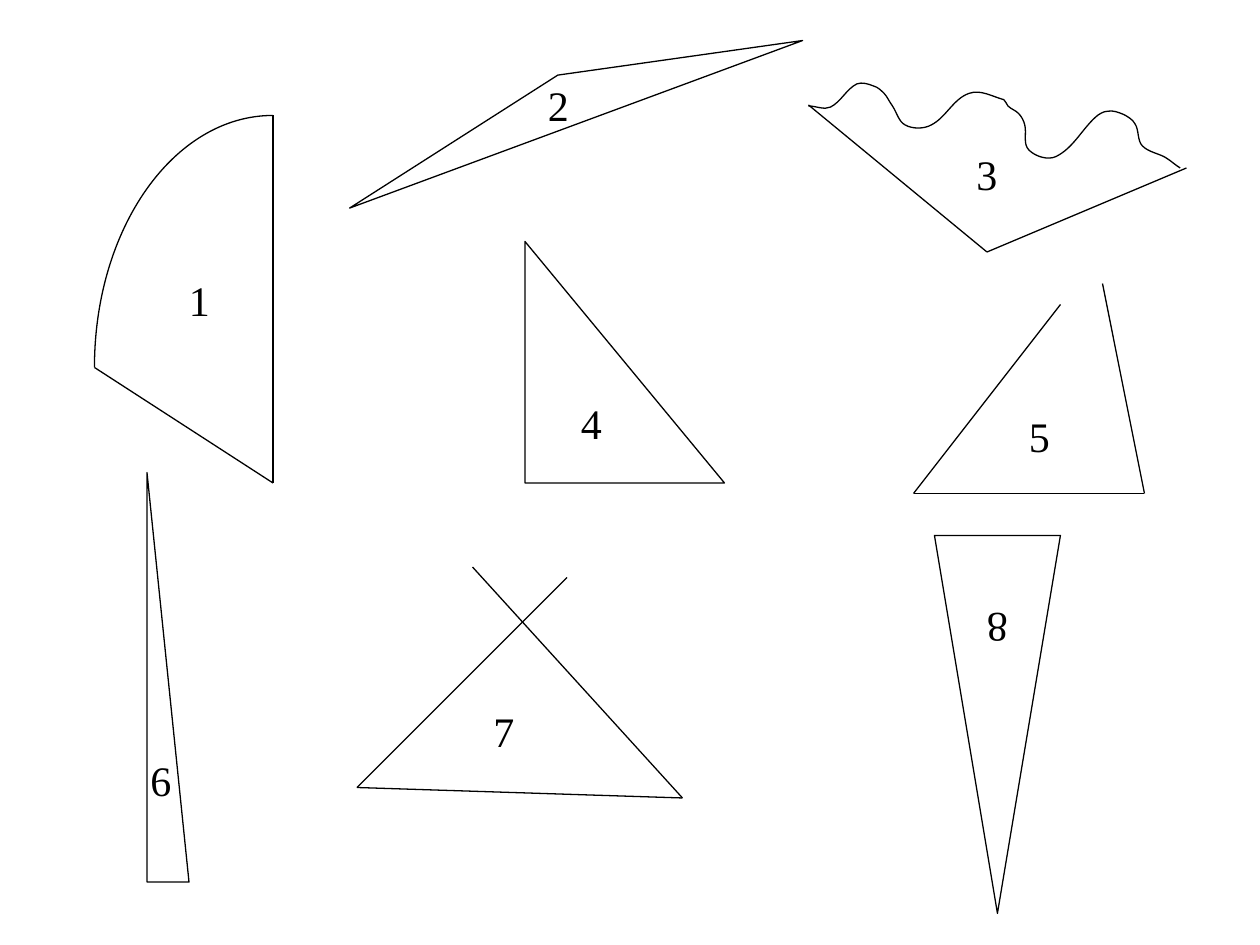
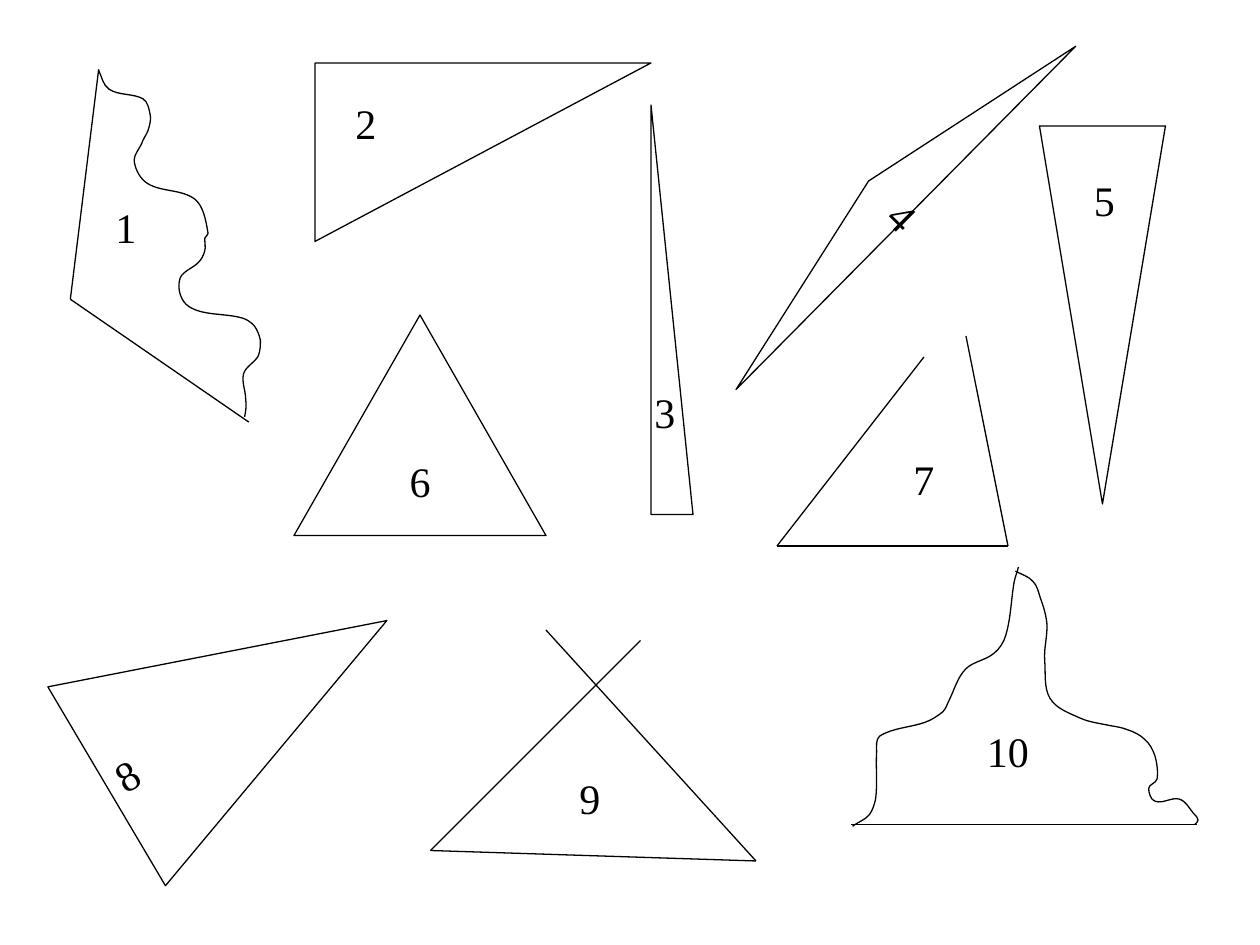
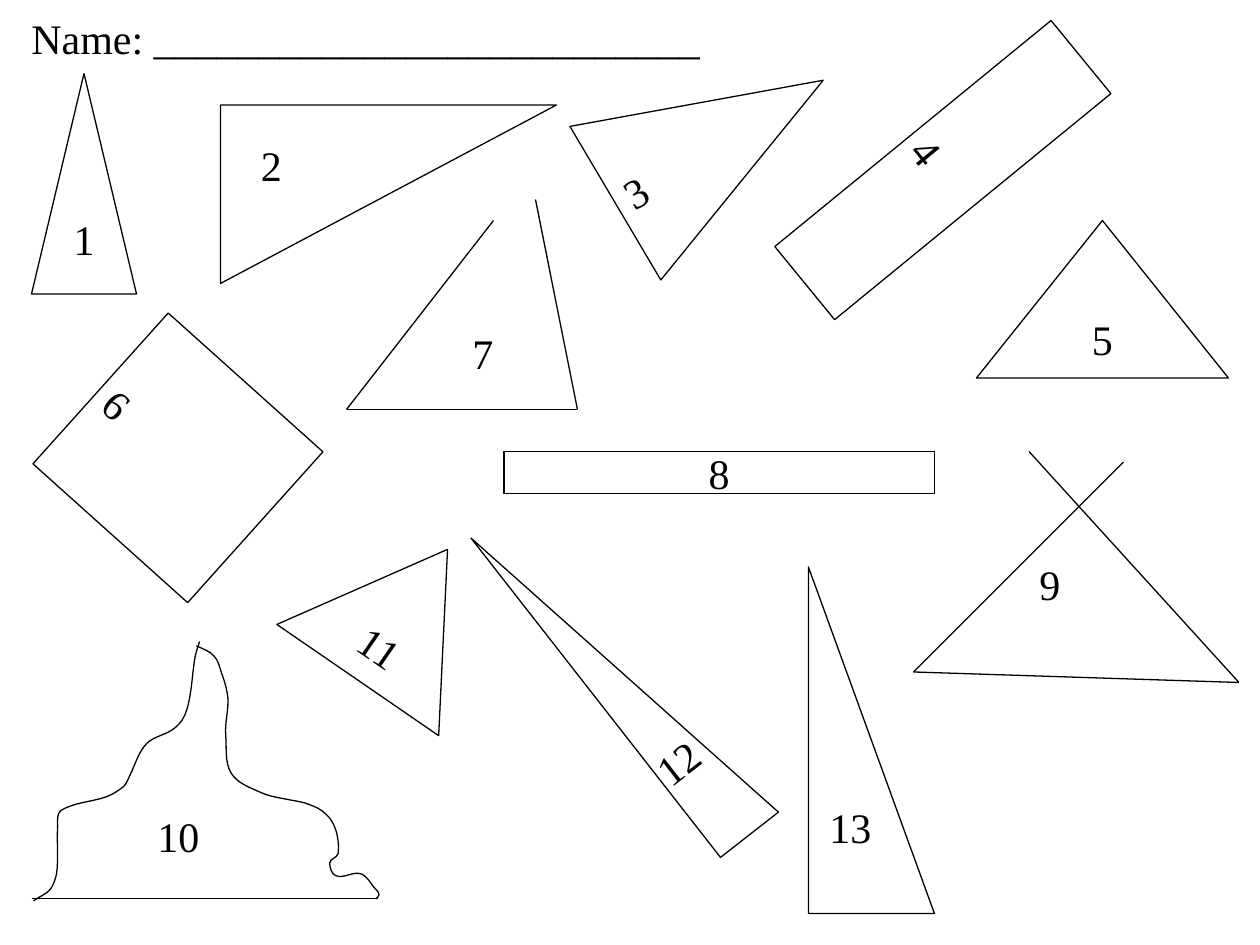
import math
from collections import namedtuple
from lxml import etree
from pptx import Presentation
from pptx import util as u
from pptx.dml.color import RGBColor
from pptx.enum import shapes, text
from pptx.oxml.ns import qn

PX = 7620
FONT = "Times New Roman"
COLORS = {"ink": "000000", "paper": "FFFFFF"}
INK = RGBColor.from_string(COLORS["ink"])
PAPER = RGBColor.from_string(COLORS["paper"])

TRIANGLE = shapes.MSO_SHAPE.ISOSCELES_TRIANGLE
RIGHT = shapes.MSO_SHAPE.RIGHT_TRIANGLE
RECTANGLE = shapes.MSO_SHAPE.RECTANGLE

UPRIGHT = {}
SIDEWAYS = {"vert": "eaVert"}
COUNTER_TURNED = {"vert": "eaVert", "rot": "10800000"}

LABEL_HEIGHT = 60
ONE_DIGIT, TWO_DIGITS, NAME_LINE = 44, 64, 661

Figure = namedtuple("Figure", "kind left top width height words angle flow flipped",
                    defaults=("", 0, UPRIGHT, False))
Sketch = namedtuple("Sketch", "sides curves", defaults=([],))
Place = namedtuple("Place", "sketch x y angle", defaults=(0,))
Label = namedtuple("Label", "words left top width", defaults=(ONE_DIGIT,))
Page = namedtuple("Page", "filled figures places labels")


def smooth(anchors):
    knots = [complex(*anchor) for anchor in anchors]
    padded = [knots[0], *knots, knots[-1]]
    headings = [(after - before) / abs(after - before)
                for before, after in zip(padded, padded[2:])]
    points = knots[:1]
    for index in range(len(knots) - 1):
        start, end = knots[index:index + 2]
        reach = abs(end - start) / 3
        points += [start + headings[index] * reach, end - headings[index + 1] * reach, end]
    return [(point.real, point.imag) for point in points]


def write(box, words):
    box.text_frame.word_wrap = False
    para = box.text_frame.paragraphs[0]
    span = para.add_run()
    span.text = words
    span.font.name = FONT
    span.font.size = u.Pt(24)
    span.font.color.rgb = INK
    return para


CROSSED = Sketch([((200, -200), (0, 0)), ((110, -210), (310, 10)), ((0, 0), (310, 10))])
OPEN = Sketch([((140, -180), (0, 0)), ((0, 0), (220, 0)), ((180, -200), (220, 0))])
SECTOR = Sketch(
    [((170, -240), (170, 110)), ((0, 0), (170, 110))],
    [[(170, -240), (76, -240), (0, -133), (0, 0)]])

wavy_top = [
    (-180, -19), (-159, -18), (-134, -40), (-118, -38), (-108, -31), (-100, -19),
    (-88, -1), (-63, -1), (-27, -31), (6, -25), (10, -19), (20, -12), (26, -1),
    (30, 23), (56, 29), (93, -8), (105, -14), (120, -11), (131, -2), (138, 19),
    (160, 30), (174, 40)]
WAVY = Sketch([((-180, -20), (-10, 120)), ((-10, 120), (180, 40))], [smooth(wavy_top)])

left_slope = [
    (2, 2), (18, -9), (24, -24), (25, -69), (28, -84), (71, -97), (88, -107),
    (94, -118), (110, -148), (137, -163), (148, -180), (156, -231), (160, -245)]
right_slope = [
    (157, -241), (174, -231), (181, -215), (187, -192), (185, -156), (190, -120),
    (219, -101), (247, -94), (264, -90), (280, -81), (290, -65), (292, -43),
    (284, -34), (290, -22), (313, -24), (328, -9), (331, -4), (328, 0)]
HILL = Sketch([((0, 0), (330, 0))], [smooth(left_slope), smooth(right_slope)])

PAGES = [
    Page(
        filled=True,
        figures=[
            Figure(TRIANGLE, 310, 70, 460, 50, angle=339.7),
            Figure(RIGHT, 140, 450, 40, 390, "6"),
            Figure(TRIANGLE, 890, 510, 120, 360, "8", flipped=True),
            Figure(RIGHT, 500, 230, 190, 230, "4")],
        places=[
            Place(SECTOR, 90, 350), Place(WAVY, 950, 120),
            Place(CROSSED, 340, 750), Place(OPEN, 870, 470)],
        labels=[
            Label("1", 168, 256), Label("2", 510, 70), Label("3", 918, 136),
            Label("5", 968, 385), Label("7", 458, 666)]),
    Page(
        filled=True,
        figures=[
            Figure(TRIANGLE, 280, 300, 240, 210, "6"),
            Figure(RIGHT, 375, -15, 170, 320, "2", 90, COUNTER_TURNED),
            Figure(TRIANGLE, 125, 515, 220, 310, "8", 59.4, COUNTER_TURNED),
            Figure(TRIANGLE, 615, 165, 460, 50, "4", 314.7, SIDEWAYS),
            Figure(RIGHT, 620, 100, 40, 390, "3"),
            Figure(TRIANGLE, 990, 120, 120, 360, flipped=True)],
        places=[
            Place(WAVY, 174, 229, 57.6), Place(HILL, 810, 785),
            Place(CROSSED, 410, 810), Place(OPEN, 740, 520)],
        labels=[
            Label("9", 540, 730), Label("5", 1030, 160), Label("1", 98, 186),
            Label("7", 858, 426), Label("10", 928, 685, TWO_DIGITS)]),
    Page(
        filled=False,
        figures=[
            Figure(TRIANGLE, 30, 70, 100, 210, "1"),
            Figure(RIGHT, 770, 540, 120, 330, "13"),
            Figure(RIGHT, 560, 450, 70, 386, "12", 322),
            Figure(RIGHT, 285, 25, 170, 320, "2", 90, COUNTER_TURNED),
            Figure(RECTANGLE, 728, 117, 340, 90, "4", 320.7, SIDEWAYS),
            Figure(TRIANGLE, 600, 20, 170, 230, "3", 59.4, COUNTER_TURNED),
            Figure(TRIANGLE, 930, 210, 240, 150, "5"),
            Figure(RECTANGLE, 73, 337, 193, 198, "6", 311.9, SIDEWAYS),
            Figure(TRIANGLE, 290, 510, 187, 151, "11", 34.5),
            Figure(RECTANGLE, 480, 430, 410, 40, "8")],
        places=[
            Place(CROSSED, 870, 640), Place(OPEN, 330, 390), Place(HILL, 30, 856)],
        labels=[
            Label("7", 438, 306), Label("9", 978, 526), Label("10", 138, 766, TWO_DIGITS),
            Label("Name: __________________________", 18, 6, NAME_LINE)]),
]

deck = Presentation()
deck.slide_width = 1200 * PX
deck.slide_height = 900 * PX

for plan in PAGES:
    page = deck.slides.add_slide(deck.slide_layouts[6])
    outlined = []

    for figure in plan.figures:
        box = page.shapes.add_shape(
            figure.kind, figure.left * PX, figure.top * PX,
            figure.width * PX, figure.height * PX)
        box.shadow.inherit = False
        box.rotation = figure.angle
        if plan.filled:
            box.fill.solid()
            box.fill.fore_color.rgb = PAPER
        else:
            box.fill.background()
        if figure.flipped:
            box._element.spPr.find(qn("a:xfrm")).set("flipV", "1")
        if figure.words:
            write(box, figure.words).alignment = text.PP_ALIGN.CENTER
            box.text_frame.vertical_anchor = text.MSO_ANCHOR.MIDDLE
            body = box.text_frame._txBody.find(qn("a:bodyPr"))
            for name, value in figure.flow.items():
                body.set(name, value)
        outlined.append(box)

    for place in plan.places:
        cosine = math.cos(math.radians(place.angle))
        sine = math.sin(math.radians(place.angle))
        sides, curves = [
            [[(round(place.x + x * cosine - y * sine), round(place.y + x * sine + y * cosine))
              for x, y in points] for points in strokes]
            for strokes in place.sketch]

        for (x1, y1), (x2, y2) in sides:
            side = page.shapes.add_connector(
                shapes.MSO_CONNECTOR.STRAIGHT, x1 * PX, y1 * PX, x2 * PX, y2 * PX)
            etree.SubElement(side._element.spPr, qn("a:effectLst"))
            outlined.append(side)

        for points in curves:
            builder = page.shapes.build_freeform(*points[0], scale=PX)
            builder.add_line_segments(points[1:], close=False)
            curve = builder.convert_to_shape()
            steps = list(curve._element.iter(qn("a:lnTo")))
            for start in range(0, len(steps), 3):
                bend = etree.SubElement(steps[start].getparent(), qn("a:cubicBezTo"))
                for step in steps[start:start + 3]:
                    bend.append(step[0])
                    step.getparent().remove(step)
            curve.shadow.inherit = False
            curve.fill.background()
            outlined.append(curve)

    for item in outlined:
        item.line.color.rgb = INK
        item.line.width = u.Pt(0.75)

    for label in plan.labels:
        box = page.shapes.add_textbox(
            label.left * PX, label.top * PX, label.width * PX, LABEL_HEIGHT * PX)
        write(box, label.words)
        box.text_frame.auto_size = text.MSO_AUTO_SIZE.SHAPE_TO_FIT_TEXT

deck.save("out.pptx")
